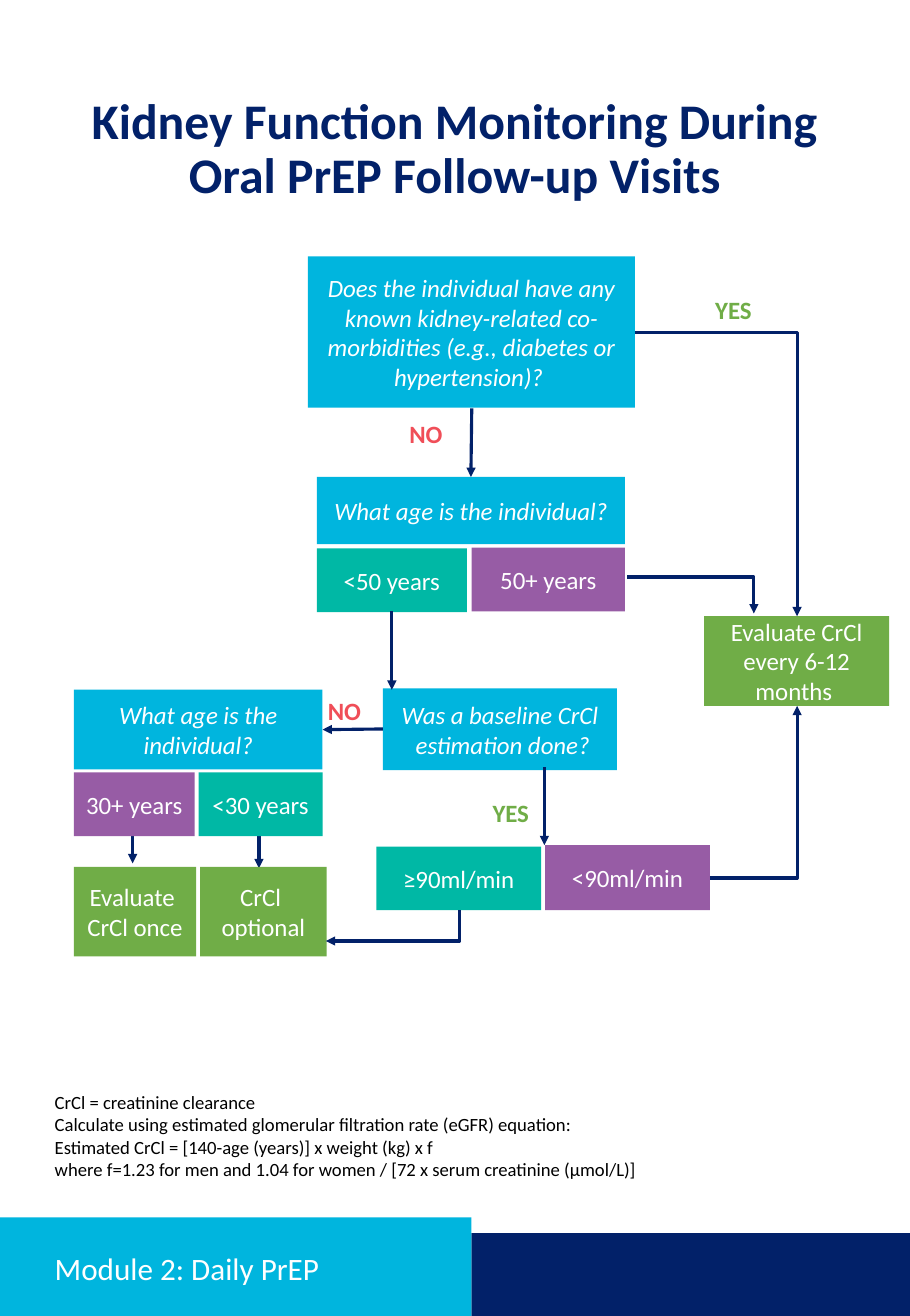
from lxml import etree
from pptx import Presentation
from pptx import util as u
from pptx.dml.color import RGBColor
from pptx.enum import shapes, text
from pptx.oxml.ns import qn

PAGE_WIDTH, PAGE_HEIGHT = u.Pt(585), u.Pt(846)
NAVY, BLUE, TEAL, PURPLE = "022169", "00B5DE", "00B8A5", "975CA5"
GREEN, RED, WHITE, BLACK = "70AD47", "F04E58", "FFFFFF", "000000"
LEFT, CENTER = text.PP_ALIGN.LEFT, text.PP_ALIGN.CENTER
TOP, MIDDLE = text.MSO_ANCHOR.TOP, text.MSO_ANCHOR.MIDDLE

QUESTIONS = [
    (28.7, 0, 40.1, 21.6, "Does the individual have any known kidney-related "
     "co-morbidities (e.g., diabetes or hypertension)? "),
    (29.8, 31.5, 37.8, 9.6, "What age is the individual?"),
    (37.9, 61.7, 28.7, 11.7, "Was a baseline CrCl\v estimation done?"),
    (0, 61.9, 30.5, 11.4, "What age is the individual?"),
]
ANSWERS = [
    (29.8, 41.7, 18.4, 9.1, "<50 years", TEAL),
    (48.8, 41.6, 18.8, 9.1, "50+ years", PURPLE),
    (0, 73.7, 14.8, 9.1, "30+ years", PURPLE),
    (15.3, 73.7, 15.2, 9.1, "<30 years", TEAL),
    (37.1, 84.3, 20.2, 9.1, "≥90ml/min", TEAL),
    (57.8, 84.1, 20.2, 9.3, "<90ml/min", PURPLE),
]
ACTIONS = [
    (77.3, 51.4, 22.7, 12.8, "Evaluate CrCl every 6-12 months "),
    (0, 87.2, 15, 12.8, "Evaluate \nCrCl once"),
    (15.5, 87.2, 15.5, 12.8, "CrCl \noptional"),
]
DECISIONS = [
    (39.8, 22.4, 7.8, "NO", RED),
    (77.3, 4.6, 12, "YES", GREEN),
    (29.8, 61.9, 9.2, "NO", RED),
    (50, 76.5, 7.8, "YES", GREEN),
]
ARROWS_BEHIND = [
    (7.2, 81.4, 7.2, 86.7),
    (22.7, 82.1, 22.7, 87.4),
]
ARROWS_IN_FRONT = [
    (48.8, 21.7, 48.7, 31.5),
    (39, 50.7, 39, 61.9),
    (37.9, 67.5, 30.5, 67.6),
    (57.7, 73, 57.7, 84.1),
]
BENT_ARROWS = [
    (68.8, 10.9, 88.7, 51.4, "tailEnd"),
    (67.9, 45.8, 83.4, 51, "tailEnd"),
    (78, 88.8, 88.7, 64.2, "tailEnd"),
    (30.9, 97.8, 47.3, 93.4, "headEnd"),
]
NOTES = """CrCl = creatinine clearance
Calculate using estimated glomerular filtration rate (eGFR) equation:
Estimated CrCl = [140-age (years)] x weight (kg) x f
where f=1.23 for men and 1.04 for women / [72 x serum creatinine (μmol/L)]"""


def color(hex_string):
    return RGBColor.from_string(hex_string)


def within(region, left, top, width, height):
    x, y, w, h = region
    return tuple(round(length) for length in (
        x + left * w / 100, y + top * h / 100, width * w / 100, height * h / 100))


def write(shape, words, size, ink, align=LEFT, anchor=TOP, bold=False,
          italic=False, spacing=1.0):
    frame = shape.text_frame
    frame.word_wrap = True
    frame.vertical_anchor = anchor
    frame.text = words
    for paragraph in frame.paragraphs:
        paragraph.alignment = align
        paragraph.line_spacing = spacing
        for run in paragraph.runs:
            run.font.name = "Calibri"
            run.font.size = u.Pt(size)
            run.font.bold = bold
            run.font.italic = italic
            run.font.color.rgb = color(ink)


def add_label(slide, box, words, size, ink, **style):
    label = slide.shapes.add_textbox(*box)
    write(label, words, size, ink, **style)


def add_panel(slide, box, fill):
    panel = slide.shapes.add_shape(shapes.MSO_SHAPE.RECTANGLE, *box)
    panel.shadow.inherit = False
    panel.fill.solid()
    panel.fill.fore_color.rgb = color(fill)
    panel.line.fill.background()
    return panel


def add_step(slide, box, words, fill, italic=False):
    step = add_panel(slide, box, fill)
    write(step, words, 16, WHITE, align=CENTER, anchor=MIDDLE, italic=italic)


def add_arrow(slide, region, ends, arrow_end="tailEnd", bent=False):
    x1, y1, x2, y2 = ends
    start = within(region, x1, y1, 0, 0)[:2]
    finish = within(region, x2, y2, 0, 0)[:2]
    kind = shapes.MSO_CONNECTOR.ELBOW if bent else shapes.MSO_CONNECTOR.STRAIGHT
    arrow = slide.shapes.add_connector(kind, *start, *finish)
    arrow.line.color.rgb = color(NAVY)
    arrow.line.width = u.Pt(2)
    properties = arrow._element.spPr
    if bent:
        properties.find(qn("a:prstGeom")).set("prst", "bentConnector2")
    etree.SubElement(properties.find(qn("a:ln")), qn("a:" + arrow_end), type="triangle")
    etree.SubElement(properties, qn("a:effectLst"))


def draw_heading(slide, region):
    add_label(slide, region, "Kidney Function Monitoring During Oral PrEP Follow-up Visits",
              32, NAVY, align=CENTER, bold=True, spacing=0.9)


def draw_flowchart(slide, region):
    for ends in ARROWS_BEHIND:
        add_arrow(slide, region, ends)
    for *box, words in QUESTIONS:
        add_step(slide, within(region, *box), words, BLUE, italic=True)
    for *box, words, fill in ANSWERS:
        add_step(slide, within(region, *box), words, fill)
    for *box, words in ACTIONS:
        add_step(slide, within(region, *box), words, GREEN)
    for left, top, width, words, ink in DECISIONS:
        add_label(slide, within(region, left, top, width, 5.9), words, 16, ink, bold=True)
    for ends in ARROWS_IN_FRONT:
        add_arrow(slide, region, ends)
    for *ends, arrow_end in BENT_ARROWS:
        add_arrow(slide, region, ends, arrow_end, bent=True)


def draw_notes(slide, region):
    add_label(slide, region, NOTES, 12, BLACK)


def draw_footer(slide, region):
    add_panel(slide, within(region, 51.8, 16, 48.2, 84), NAVY)
    add_panel(slide, within(region, 0, 0, 51.8, 100), BLUE)
    add_label(slide, within(region, 4.8, 28.4, 43.3, 51), "Module 2: Daily PrEP",
              20, WHITE, anchor=MIDDLE, spacing=0.9)


def main():
    deck = Presentation()
    deck.slide_width, deck.slide_height = PAGE_WIDTH, PAGE_HEIGHT
    slide = deck.slides.add_slide(deck.slide_layouts[6])
    page = (0, 0, PAGE_WIDTH, PAGE_HEIGHT)
    draw_footer(slide, within(page, 0, 92.5, 100, 7.5))
    draw_heading(slide, within(page, 7.5, 6.9, 85, 9.6))
    draw_flowchart(slide, within(page, 8.12, 19.49, 89.6, 53.19))
    draw_notes(slide, within(page, 4.8, 82.47, 70.8, 7.75))
    deck.save("out.pptx")


if __name__ == "__main__":
    main()
